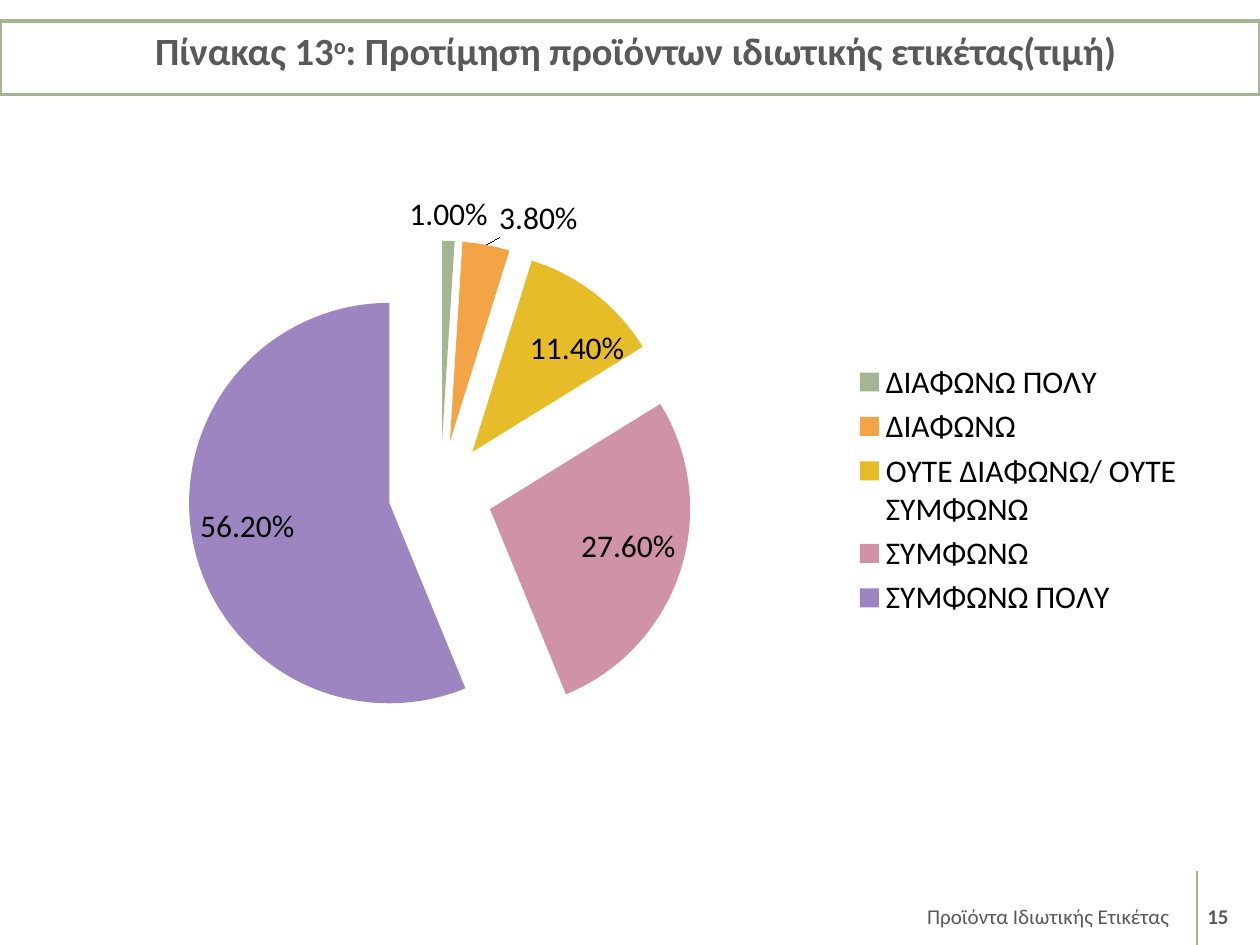
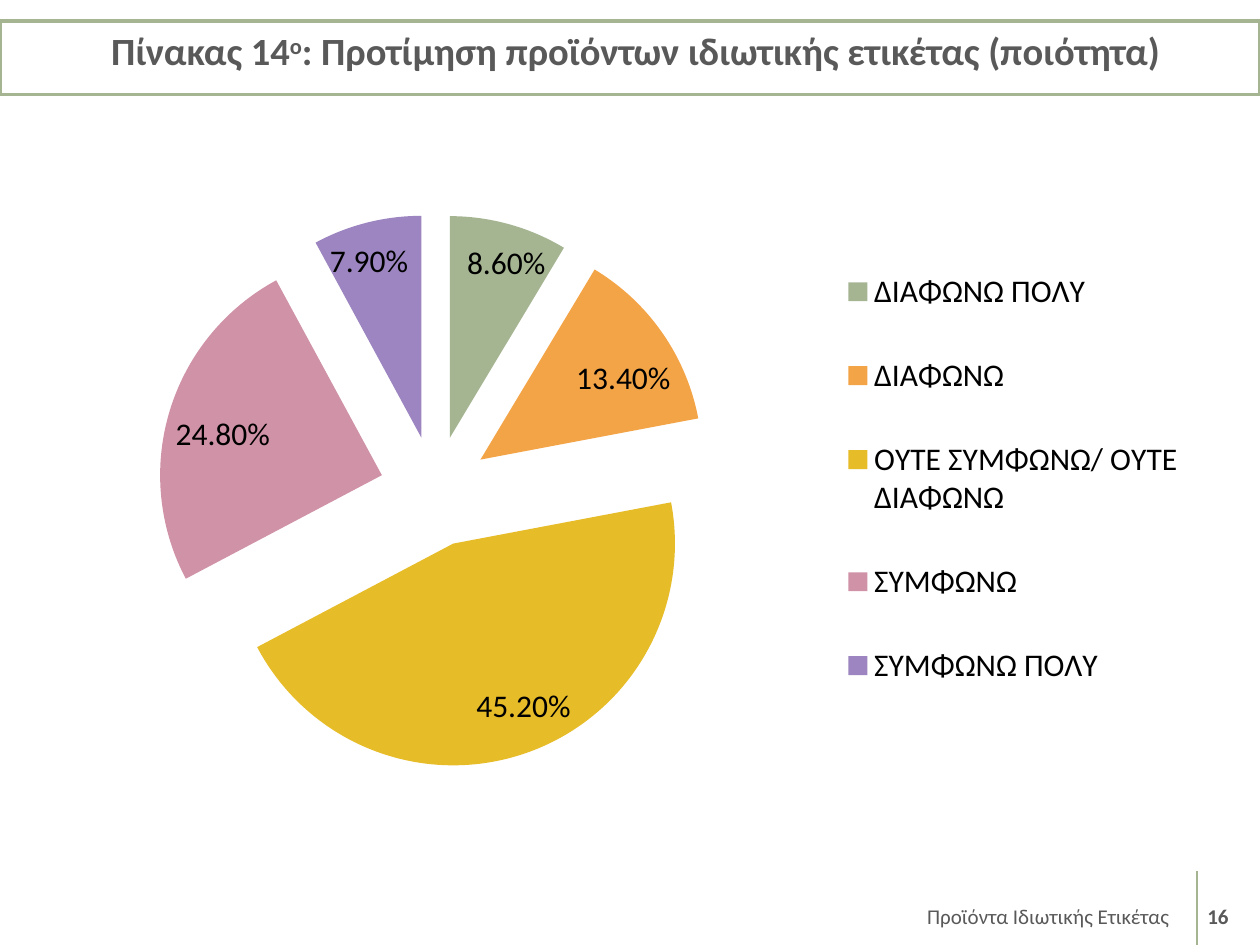
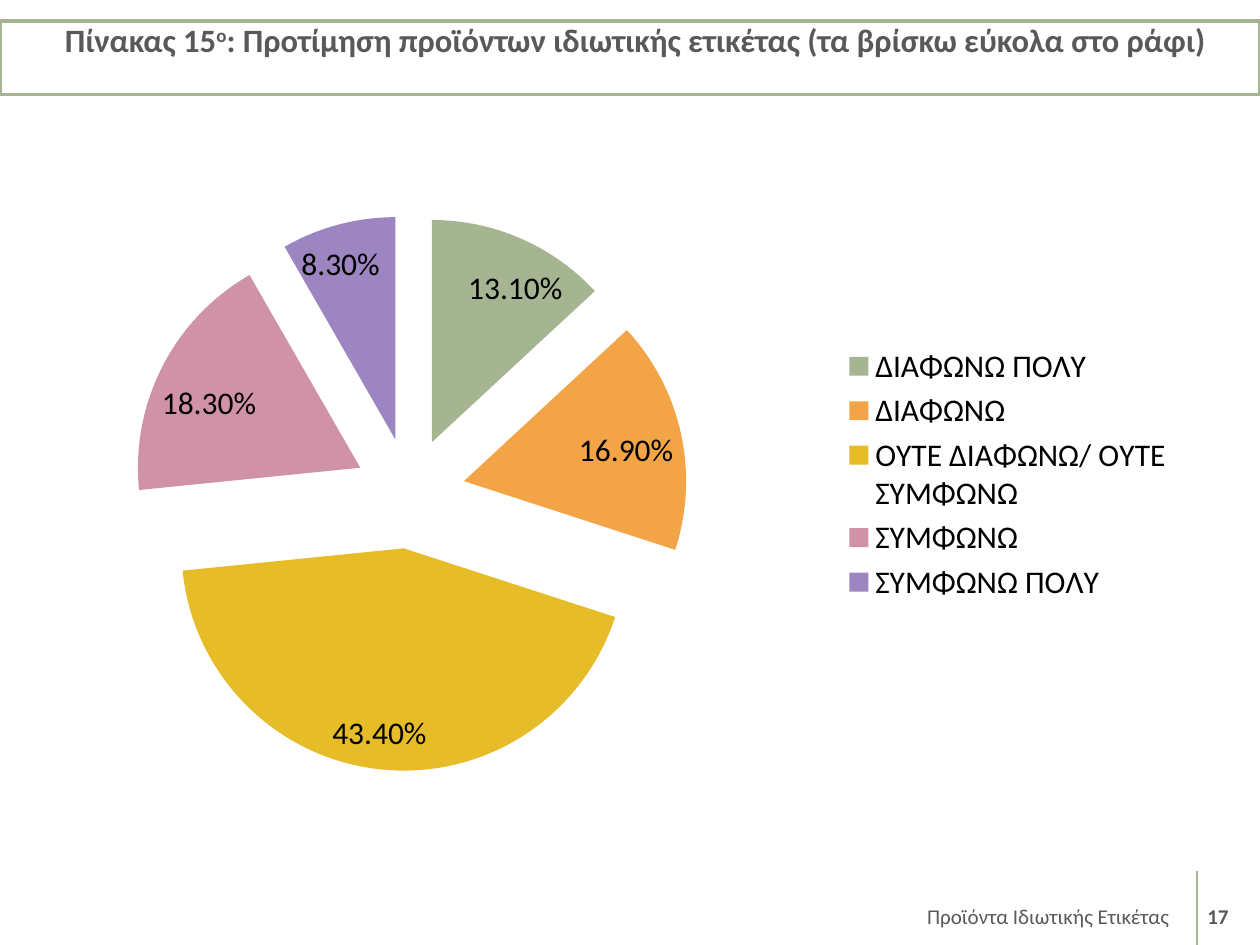
"""Build three pie-chart slides on preference for private-label products."""
from dataclasses import dataclass

from lxml.etree import SubElement
from pptx import Presentation
from pptx.chart.data import CategoryChartData
from pptx.dml.color import RGBColor
from pptx.enum.chart import XL_CHART_TYPE as ChartType
from pptx.enum.chart import XL_LABEL_POSITION as LabelPosition
from pptx.enum.chart import XL_LEGEND_POSITION as LegendPosition
from pptx.enum.shapes import MSO_CONNECTOR as Connector
from pptx.enum.text import MSO_ANCHOR as Anchor
from pptx.enum.text import MSO_AUTO_SIZE as AutoSize
from pptx.enum.text import PP_ALIGN as Align
from pptx.oxml import parse_xml
from pptx.oxml.ns import nsdecls, qn
from pptx.util import Pt


@dataclass(frozen=True)
class Theme:
    font: str = "Calibri"
    ink: str = "595959"
    label: str = "000000"
    paper: str = "FFFFFF"
    accent: str = "A5B592"
    answers: tuple = ("A5B592", "F3A447", "E7BC29", "D092A7", "9C85C0")
    footer_size: float = 12
    chart_size: float = 18


theme = Theme()


def style(font, size, color, bold=False):
    font.name = theme.font
    font.size = Pt(size)
    font.bold = bold
    font.color.rgb = RGBColor.from_string(color)


def set_layout(parent, index, box, inner=False):
    for old in parent.findall(qn("c:layout")):
        parent.remove(old)
    layout = parse_xml(f"<c:layout {nsdecls('c')}><c:manualLayout/></c:layout>")
    settings = [("layoutTarget", "inner")] if inner else []
    settings += [("xMode", "edge"), ("yMode", "edge"), *zip("xywh", box)]
    for tag, value in settings:
        SubElement(layout[0], qn(f"c:{tag}")).set("val", str(value))
    parent.insert(index, layout)


NEUTRAL = "ΟΥΤΕ ΔΙΑΦΩΝΩ/ ΟΥΤΕ ΣΥΜΦΩΝΩ"
NEUTRAL_REVERSED = "ΟΥΤΕ ΣΥΜΦΩΝΩ/ ΟΥΤΕ ΔΙΑΦΩΝΩ"
questions = [
    dict(number=13, topic="ετικέτας(τιμή)", size=22, spacing=None, neutral=NEUTRAL,
         shares=(0.01, 0.038, 0.114, 0.276, 0.562), explosion=26,
         frame=(24, 102, 660, 356), plot=(0.06, 0.1, 0.57, 0.81), legend=None),
    dict(number=14, topic="ετικέτας (ποιότητα)", size=22, spacing=None, neutral=NEUTRAL_REVERSED,
         shares=(0.086, 0.134, 0.452, 0.248, 0.079), explosion=25,
         frame=(36, 90, 654, 360), plot=(0.08, 0.09, 0.49, 0.88), legend=(0.67, 0.11, 0.32, 0.8)),
    dict(number=15, topic="ετικέτας (τα βρίσκω εύκολα στο ράφι)", size=18.6, spacing=0.8, neutral=NEUTRAL,
         shares=(0.131, 0.169, 0.434, 0.183, 0.083), explosion=25,
         frame=(30, 90, 648, 362), plot=(0.07, 0.09, 0.49, 0.88), legend=None),
]

deck = Presentation()
deck.slide_width, deck.slide_height = Pt(720), Pt(540)
title_only = deck.slide_layouts[5]

for page, question in enumerate(questions, start=15):
    slide = deck.slides.add_slide(title_only)

    heading = slide.shapes.title
    heading.left, heading.top, heading.width, heading.height = Pt(0), Pt(12), Pt(720), Pt(42)
    heading.fill.solid()
    heading.fill.fore_color.rgb = RGBColor.from_string(theme.paper)
    heading.line.color.rgb = RGBColor.from_string(theme.accent)
    heading.line.width = Pt(2)
    heading.text_frame.auto_size = AutoSize.NONE
    heading.text_frame.vertical_anchor = Anchor.TOP
    line = heading.text_frame.paragraphs[0]
    line.alignment = Align.CENTER
    line.space_before = Pt(6)
    line.line_spacing = question["spacing"]
    indents = line._p.get_or_add_pPr()
    indents.set("marL", str(Pt(28.8)))
    indents.set("indent", str(Pt(-22.3)))
    title_parts = (
        (f"Πίνακας {question['number']}", 0),
        ("ο", 30000),
        (f": Προτίμηση προϊόντων ιδιωτικής {question['topic']}", 0),
    )
    for words, baseline in title_parts:
        part = line.add_run()
        part.text = words
        style(part.font, question["size"], theme.ink, bold=True)
        part.font._element.set("baseline", str(baseline))

    footers = (
        (str(page), 678, 36, Align.CENTER, True),
        ("Προϊόντα Ιδιωτικής Ετικέτας ", 450, 228, Align.RIGHT, False),
    )
    for words, left, width, alignment, bold in footers:
        footer = slide.shapes.add_textbox(Pt(left), Pt(497), Pt(width), Pt(37.5)).text_frame
        footer.word_wrap = True
        footer.vertical_anchor = Anchor.BOTTOM
        footer.text = words
        footer.paragraphs[0].alignment = alignment
        style(footer.paragraphs[0].runs[0].font, theme.footer_size, theme.ink, bold)

    divider = slide.shapes.add_connector(Connector.STRAIGHT, Pt(684), Pt(498), Pt(684), Pt(540))
    divider.line.color.rgb = RGBColor.from_string(theme.accent)
    divider.line.width = Pt(0.75)
    SubElement(divider._element.spPr, qn("a:effectLst"))

    survey = CategoryChartData(number_format="0.00%")
    survey.categories = ["ΔΙΑΦΩΝΩ ΠΟΛΎ", "ΔΙΑΦΩΝΩ", question["neutral"], "ΣΥΜΦΩΝΩ", "ΣΥΜΦΩΝΩ ΠΟΛΎ"]
    survey.add_series("Series 1", question["shares"])
    frame = [Pt(length) for length in question["frame"]]
    chart = slide.shapes.add_chart(ChartType.PIE, *frame, survey).chart
    chart.has_title = False
    style(chart.font, theme.chart_size, theme.label)
    chart.has_legend = True
    chart.legend.position = LegendPosition.RIGHT
    chart.legend.include_in_layout = False
    if question["legend"]:
        set_layout(chart.legend._element, 1, question["legend"])

    pie = chart.plots[0]
    pie.vary_by_categories = True
    set_layout(chart._chartSpace.chart.plotArea, 0, question["plot"], inner=True)
    answers = pie.series[0]
    for index, color in enumerate(theme.answers):
        fill = answers.points[index].format.fill
        fill.solid()
        fill.fore_color.rgb = RGBColor.from_string(color)
    for follower in answers._element.xpath("c:dPt[1] | c:dPt/c:spPr"):
        follower.addprevious(parse_xml(f'<c:explosion {nsdecls("c")} val="{question["explosion"]}"/>'))

    labels = answers.data_labels
    labels.show_value = True
    labels.number_format = "0.00%"
    labels.number_format_is_linked = False
    labels.position = LabelPosition.BEST_FIT
    style(labels.font, theme.chart_size, theme.label)

deck.save("out.pptx")
